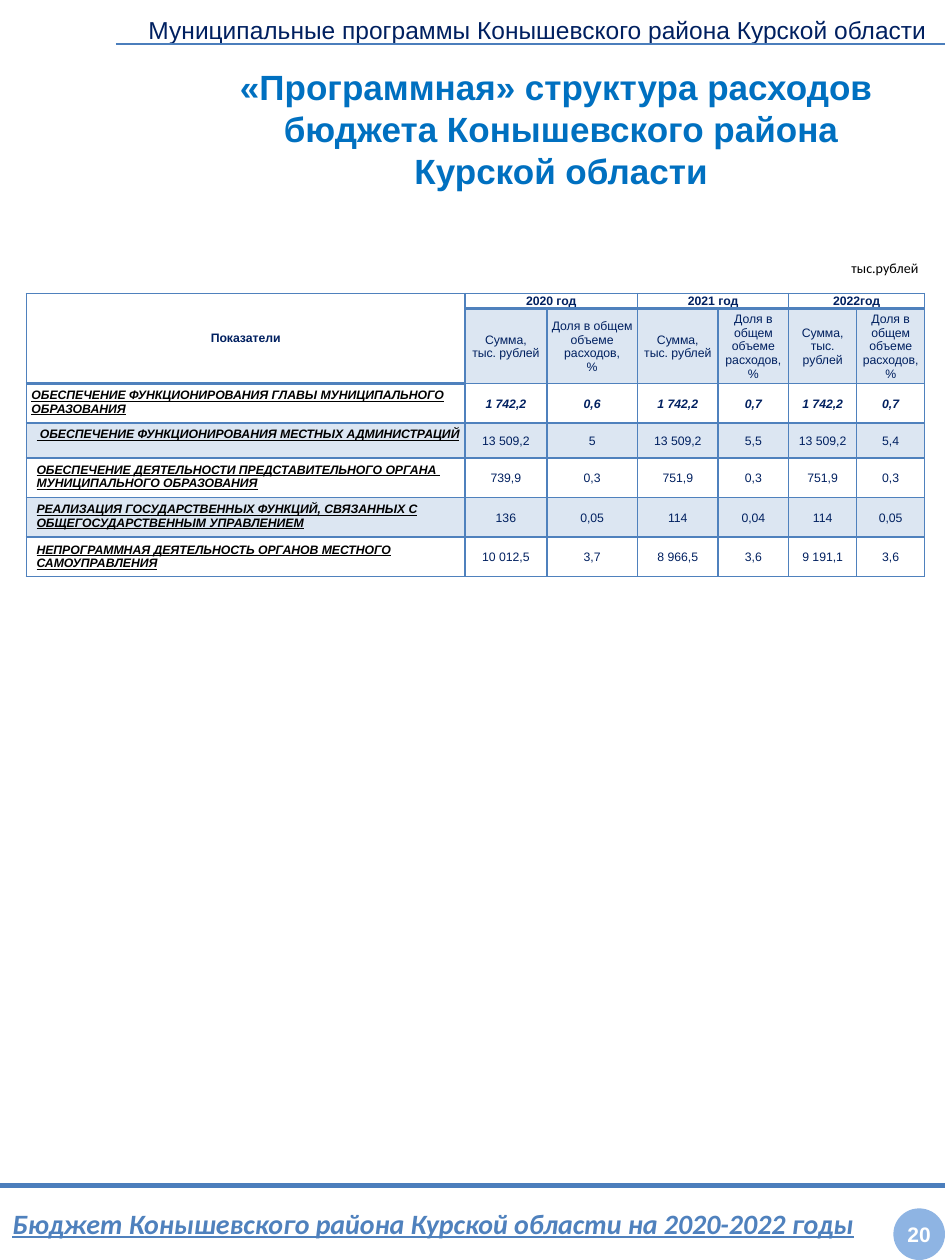
from copy import deepcopy
from dataclasses import dataclass

from lxml import etree
from pptx import Presentation
from pptx.dml.color import RGBColor
from pptx.enum.shapes import MSO_CONNECTOR, MSO_SHAPE
from pptx.enum.text import MSO_ANCHOR, PP_ALIGN
from pptx.oxml.ns import qn
from pptx.util import Inches, Pt

LEFT, CENTER = PP_ALIGN.LEFT, PP_ALIGN.CENTER
TOP, MIDDLE = MSO_ANCHOR.TOP, MSO_ANCHOR.MIDDLE
STRAIGHT, OVAL = MSO_CONNECTOR.STRAIGHT, MSO_SHAPE.OVAL


@dataclass(frozen=True)
class Theme:
    """Colours, fonts and type sizes of the slide."""
    navy: str = "002060"
    title: str = "0070C0"
    accent: str = "4F81BD"
    rule: str = "4B7EBC"
    band: str = "DCE6F2"
    badge: str = "8EB4E3"
    black: str = "000000"
    white: str = "FFFFFF"
    sans: str = "Arial"
    alt: str = "Calibri"
    title_pt: float = 20
    footer_pt: float = 16
    header_pt: float = 14
    badge_pt: float = 12
    unit_pt: float = 8
    cell_pt: float = 7


T = Theme()
COLS = [3.48, 0.65, 0.72, 0.64, 0.56, 0.54, 0.54]
ROWS = [0.12, 0.55, 0.3, 0.28, 0.3, 0.3, 0.29]
YEARS = ["2020 год", "2021 год", "2022год"]
AMOUNT = "Сумма,\nтыс. рублей"
SHARE = "Доля в общем объеме расходов,"
HEADS = [AMOUNT, SHARE + "\n%", AMOUNT, SHARE + " %", AMOUNT, SHARE + " %"]
ITEMS = [
    ("ОБЕСПЕЧЕНИЕ ФУНКЦИОНИРОВАНИЯ ГЛАВЫ МУНИЦИПАЛЬНОГО ОБРАЗОВАНИЯ",
     ["1 742,2", "0,6", "1 742,2", "0,7", "1 742,2", "0,7"]),
    (" ОБЕСПЕЧЕНИЕ ФУНКЦИОНИРОВАНИЯ МЕСТНЫХ АДМИНИСТРАЦИЙ",
     ["13 509,2", "5", "13 509,2", "5,5", "13 509,2", "5,4"]),
    ("ОБЕСПЕЧЕНИЕ ДЕЯТЕЛЬНОСТИ ПРЕДСТАВИТЕЛЬНОГО ОРГАНА  МУНИЦИПАЛЬНОГО ОБРАЗОВАНИЯ",
     ["739,9", "0,3", "751,9", "0,3", "751,9", "0,3"]),
    ("РЕАЛИЗАЦИЯ ГОСУДАРСТВЕННЫХ ФУНКЦИЙ, СВЯЗАННЫХ С ОБЩЕГОСУДАРСТВЕННЫМ УПРАВЛЕНИЕМ",
     ["136", "0,05", "114", "0,04", "114", "0,05"]),
    ("НЕПРОГРАММНАЯ ДЕЯТЕЛЬНОСТЬ ОРГАНОВ МЕСТНОГО САМОУПРАВЛЕНИЯ",
     ["10 012,5", "3,7", "8 966,5", "3,6", "9 191,1", "3,6"]),
]


def write(tf, text, size, color, font=T.sans, bold=False, italic=False,
          underline=False, align=LEFT):
    """Fill a text frame with evenly formatted text."""
    tf.text = text
    for p in tf.paragraphs:
        p.alignment = align
        for r in p.runs:
            r.font.name, r.font.size = font, Pt(size)
            r.font.bold, r.font.italic, r.font.underline = bold, italic, underline
            r.font.color.rgb = RGBColor.from_string(color)
        for br in p._p.findall(qn("a:br")):
            br.append(deepcopy(p.runs[0]._r.rPr))


def set_margins(box, left, top, right, bottom):
    """Set the inner margins of a cell or text frame in inches."""
    box.margin_left, box.margin_top = Inches(left), Inches(top)
    box.margin_right, box.margin_bottom = Inches(right), Inches(bottom)


def add_rule(shapes, x, y, w, weight):
    """Draw a horizontal rule."""
    cx = shapes.add_connector(STRAIGHT, Inches(x), Inches(y), Inches(x + w), Inches(y))
    cx.line.color.rgb = RGBColor.from_string(T.rule)
    cx.line.width = Pt(weight)
    etree.SubElement(cx._element.spPr, qn("a:effectLst"))


def add_label(shapes, x, y, w, h, text, size, color, wrap=False, anchor=TOP, **fmt):
    """Add a text box."""
    tf = shapes.add_textbox(Inches(x), Inches(y), Inches(w), Inches(h)).text_frame
    tf.word_wrap, tf.vertical_anchor = wrap, anchor
    write(tf, text, size, color, **fmt)


def add_title(slide, x, y, w, h):
    """Place the slide title in its placeholder."""
    sp = slide.shapes.title
    sp.left, sp.top, sp.width, sp.height = Inches(x), Inches(y), Inches(w), Inches(h)
    tf = sp.text_frame
    tf.word_wrap, tf.vertical_anchor = True, MIDDLE
    set_margins(tf, 0.1, 0.05, 0.1, 0.38)
    write(tf, "«Программная» структура расходов\v бюджета Конышевского района"
          "\v Курской области", T.title_pt, T.title, bold=True, align=CENTER)


def add_header(slide, x, y, w, h):
    """Place the section name over its rule."""
    add_label(slide.shapes, x + 0.16, y, w - 0.16, h,
              "Муниципальные программы Конышевского района Курской области",
              T.header_pt, T.navy)
    add_rule(slide.shapes, x, y + 0.28, w, 0.75)


def set_borders(cell, bottom):
    """Draw the four borders of a cell."""
    tcPr = cell._tc.get_or_add_tcPr()
    for i, side in enumerate(("lnL", "lnR", "lnT", "lnB")):
        ln = etree.Element(qn("a:" + side), w=str(Pt(bottom if side == "lnB" else 1)))
        fill = etree.SubElement(ln, qn("a:solidFill"))
        etree.SubElement(fill, qn("a:srgbClr"), val=T.accent)
        tcPr.insert(i, ln)


def fill_cell(cell, text, margins, band=False, bottom=1, anchor=MIDDLE,
              color=T.navy, align=CENTER, **fmt):
    """Write and format one table cell."""
    set_margins(cell, *margins)
    cell.vertical_anchor = anchor
    if band:
        cell.fill.solid()
        cell.fill.fore_color.rgb = RGBColor.from_string(T.band)
    else:
        cell.fill.background()
    set_borders(cell, bottom)
    write(cell.text_frame, text, T.cell_pt, color, align=align, **fmt)


def add_budget_table(slide, x, y, w, h):
    """Place the spending table with its unit label above."""
    add_label(slide.shapes, x + w - 0.68, y - 0.32, 0.74, 0.24, "тыс.рублей",
              T.unit_pt, T.black, font=T.alt)
    tbl = slide.shapes.add_table(len(ROWS), len(COLS), Inches(x), Inches(y),
                                 Inches(w), Inches(h)).table
    tbl.first_row = tbl.horz_banding = False
    for col, width in zip(tbl.columns, COLS):
        col.width = Inches(width)
    for row, height in zip(tbl.rows, ROWS):
        row.height = Inches(height)

    flush, tight = (0, 0, 0, 0), (0.01, 0.01, 0.01, 0)
    tbl.cell(0, 0).merge(tbl.cell(1, 0))
    fill_cell(tbl.cell(0, 0), "Показатели", flush, bottom=2, bold=True)
    set_borders(tbl.cell(1, 0), 2)
    for i, year in enumerate(YEARS):
        c = 1 + 2 * i
        tbl.cell(0, c).merge(tbl.cell(0, c + 1))
        fill_cell(tbl.cell(0, c), year, flush, bottom=2, bold=True)
        set_borders(tbl.cell(0, c + 1), 2)
    for c, head in enumerate(HEADS, 1):
        fill_cell(tbl.cell(1, c), head, tight, band=True)
    for i, (name, values) in enumerate(ITEMS):
        first, last, band = i == 0, i == len(ITEMS) - 1, i % 2 == 1
        fill_cell(tbl.cell(i + 2, 0), name, (0.04 if first else 0.08, 0.04, 0.04, 0.04),
                  band=band, anchor=MIDDLE if last else TOP, color=T.black,
                  align=LEFT, bold=True, italic=True, underline=True)
        for c, value in enumerate(values, 1):
            fill_cell(tbl.cell(i + 2, c), value, tight, band=band,
                      bold=first, italic=first)


def add_footer(slide, x, y, w, h):
    """Place the footer line, document name and page badge as a group."""
    shapes = slide.shapes.add_group_shape().shapes
    add_label(shapes, x, y, w, h,
              "Бюджет Конышевского района Курской области на 2020-2022 годы",
              T.footer_pt, T.accent, wrap=True, anchor=MIDDLE, font=T.alt,
              bold=True, italic=True, underline=True)
    add_rule(shapes, x, y, w, 3)
    d = 0.41
    sp = shapes.add_shape(OVAL, Inches(x + w - d), Inches(y + h - d), Inches(d), Inches(d))
    sp.shadow.inherit = False
    sp.fill.solid()
    sp.fill.fore_color.rgb = RGBColor.from_string(T.badge)
    sp.line.fill.background()
    tf = sp.text_frame
    set_margins(tf, 0.04, 0.05, 0.04, 0.05)
    tf.vertical_anchor = MIDDLE
    write(tf, "20", T.badge_pt, T.white, bold=True, align=CENTER)


def main():
    """Build the slide and save it."""
    prs = Presentation()
    prs.slide_width, prs.slide_height = Inches(7.5), Inches(10)
    slide = prs.slides.add_slide(prs.slide_layouts[5])
    add_title(slide, 1.04, 0.35, 6.75, 1.67)
    add_budget_table(slide, 0.21, 2.33, sum(COLS), sum(ROWS))
    add_header(slide, 0.92, 0.07, 6.58, 0.57)
    add_footer(slide, 0, 9.41, 7.5, 0.59)
    prs.save("out.pptx")


if __name__ == "__main__":
    main()
